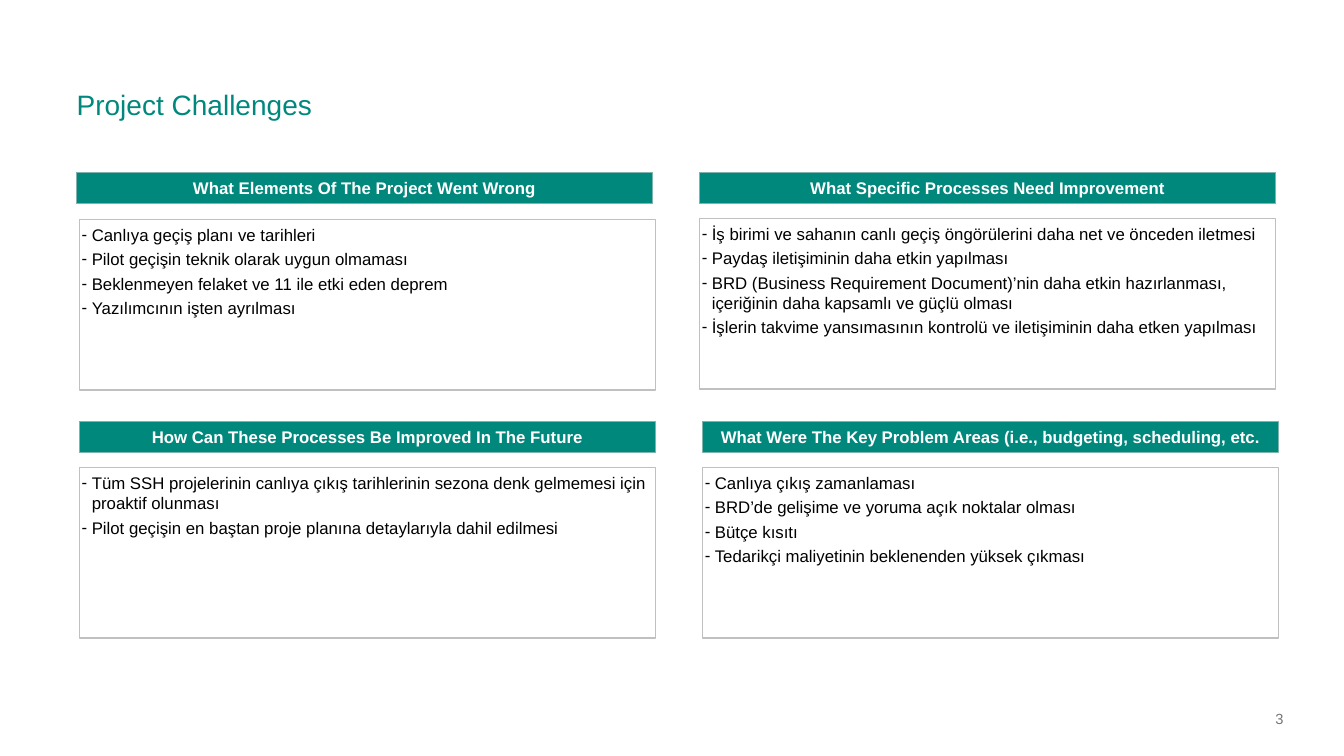
"""Build the Project Challenges slide with four headed panels."""
import pptx
import pptx.dml.color
import pptx.enum.shapes
import pptx.enum.text
import pptx.oxml.ns
import pptx.util
from lxml import etree

Inches, Pt = pptx.util.Inches, pptx.util.Pt
ALIGN = pptx.enum.text.PP_ALIGN
ANCHOR = pptx.enum.text.MSO_ANCHOR
TEAL, TEAL_EDGE, GREY_EDGE = "00887D", "7FB3AD", "C0C0C0"
PANEL_WIDTH, HEADING_HEIGHT, BODY_HEIGHT = 5.71, 0.31, 1.69

PANELS = [
    (0.76, 1.71, 0.79, 2.18, "What Elements Of The Project Went Wrong", [
        "Canlıya geçiş planı ve tarihleri",
        "Pilot geçişin teknik olarak uygun olmaması",
        "Beklenmeyen felaket ve 11 ile etki eden deprem",
        "Yazılımcının işten ayrılması",
    ]),
    (6.94, 1.71, 6.94, 2.17, "What Specific Processes Need Improvement", [
        "İş birimi ve sahanın canlı geçiş öngörülerini daha net ve önceden iletmesi",
        "Paydaş iletişiminin daha etkin yapılması",
        "BRD (Business Requirement Document)’nin daha etkin hazırlanması, "
        "içeriğinin daha kapsamlı ve güçlü olması",
        "İşlerin takvime yansımasının kontrolü ve iletişiminin daha etken yapılması",
    ]),
    (0.79, 4.18, 0.79, 4.64, "How Can These Processes Be Improved In The Future", [
        "Tüm SSH projelerinin canlıya çıkış tarihlerinin sezona denk gelmemesi için "
        "proaktif olunması",
        "Pilot geçişin en baştan proje planına detaylarıyla dahil edilmesi",
    ]),
    (6.97, 4.18, 6.97, 4.64,
     "What Were The Key Problem Areas (i.e., budgeting, scheduling, etc.", [
         "Canlıya çıkış zamanlaması",
         "BRD’de gelişime ve yoruma açık noktalar olması",
         "Bütçe kısıtı",
         "Tedarikçi maliyetinin beklenenden yüksek çıkması",
     ]),
]


def color(hex_value):
    """Turn a hex string into a colour."""
    return pptx.dml.color.RGBColor.from_string(hex_value)


def apply(target, formats):
    """Set each attribute in formats on target."""
    for attribute, value in formats.items():
        setattr(target, attribute, value)


def set_frame(frame, anchor, insets):
    """Set wrapping, anchor and insets (left, top, right, bottom)."""
    sides = ("margin_left", "margin_top", "margin_right", "margin_bottom")
    margins = {side: Inches(inset) for side, inset in zip(sides, insets)}
    apply(frame, {"word_wrap": True, "vertical_anchor": anchor, **margins})


def write(paragraph, text, size, hex_value, bold=False, **formats):
    """Write one styled run into a paragraph."""
    run = paragraph.add_run()
    run.text = text
    apply(run.font, {"name": "Arial", "size": Pt(size), "bold": bold})
    run.font.color.rgb = color(hex_value)
    apply(paragraph, formats)


def add_dash(paragraph):
    """Give a paragraph a black dash bullet and a hanging indent."""
    properties = paragraph._p.get_or_add_pPr()
    properties.set("marL", str(Inches(0.1)))
    properties.set("indent", str(-Inches(0.1)))
    qn = pptx.oxml.ns.qn
    bullet_color = etree.SubElement(properties, qn("a:buClr"))
    etree.SubElement(bullet_color, qn("a:srgbClr"), val="000000")
    etree.SubElement(properties, qn("a:buFont"), typeface="Arial")
    etree.SubElement(properties, qn("a:buChar"), char="-")


def add_label(slide, box, text, size, hex_value, anchor, insets, **formats):
    """Add a text box holding one line."""
    label = slide.shapes.add_textbox(*map(Inches, box))
    set_frame(label.text_frame, anchor, insets)
    write(label.text_frame.paragraphs[0], text, size, hex_value, **formats)


def add_box(slide, box, fill, edge, edge_width):
    """Add a flat outlined rectangle."""
    rectangle = slide.shapes.add_shape(
        pptx.enum.shapes.MSO_SHAPE.RECTANGLE, *map(Inches, box))
    rectangle.shadow.inherit = False
    rectangle.fill.solid()
    rectangle.fill.fore_color.rgb = color(fill)
    rectangle.line.color.rgb = color(edge)
    rectangle.line.width = Pt(edge_width)
    return rectangle.text_frame


def add_heading(slide, left, top, text):
    """Add a teal heading bar."""
    frame = add_box(slide, (left, top, PANEL_WIDTH, HEADING_HEIGHT), TEAL, TEAL_EDGE, 0.75)
    set_frame(frame, ANCHOR.MIDDLE, (0.1, 0.05, 0.1, 0.05))
    write(frame.paragraphs[0], text, 12, "FFFFFF", bold=True, alignment=ALIGN.CENTER)


def add_body(slide, left, top, points):
    """Add an outlined box with a dashed list."""
    frame = add_box(slide, (left, top, PANEL_WIDTH, BODY_HEIGHT), "FFFFFF", GREY_EDGE, 1)
    set_frame(frame, ANCHOR.TOP, (0.02, 0.05, 0, 0.05))
    for index, point in enumerate(points):
        paragraph = frame.add_paragraph() if index else frame.paragraphs[0]
        add_dash(paragraph)
        write(paragraph, point, 12, "000000", alignment=ALIGN.LEFT,
              space_before=Pt(3 if index else 0))


def main():
    """Build and save the slide."""
    presentation = pptx.Presentation()
    apply(presentation, {"slide_width": Inches(13.33), "slide_height": Inches(7.5)})
    slide = presentation.slides.add_slide(presentation.slide_layouts[6])
    add_label(slide, (0.76, 0.77, 11.89, 0.44), "Project Challenges", 20, TEAL,
              ANCHOR.BOTTOM, (0, 0, 0, 0), line_spacing=0.9)
    add_label(slide, (12.65, 6.93, 0.64, 0.4), "3", 10.5, "777777",
              ANCHOR.MIDDLE, (0, 0.05, 0, 0.05))
    for heading_left, heading_top, body_left, body_top, heading, points in PANELS:
        add_heading(slide, heading_left, heading_top, heading)
        add_body(slide, body_left, body_top, points)
    presentation.save("out.pptx")


if __name__ == "__main__":
    main()
